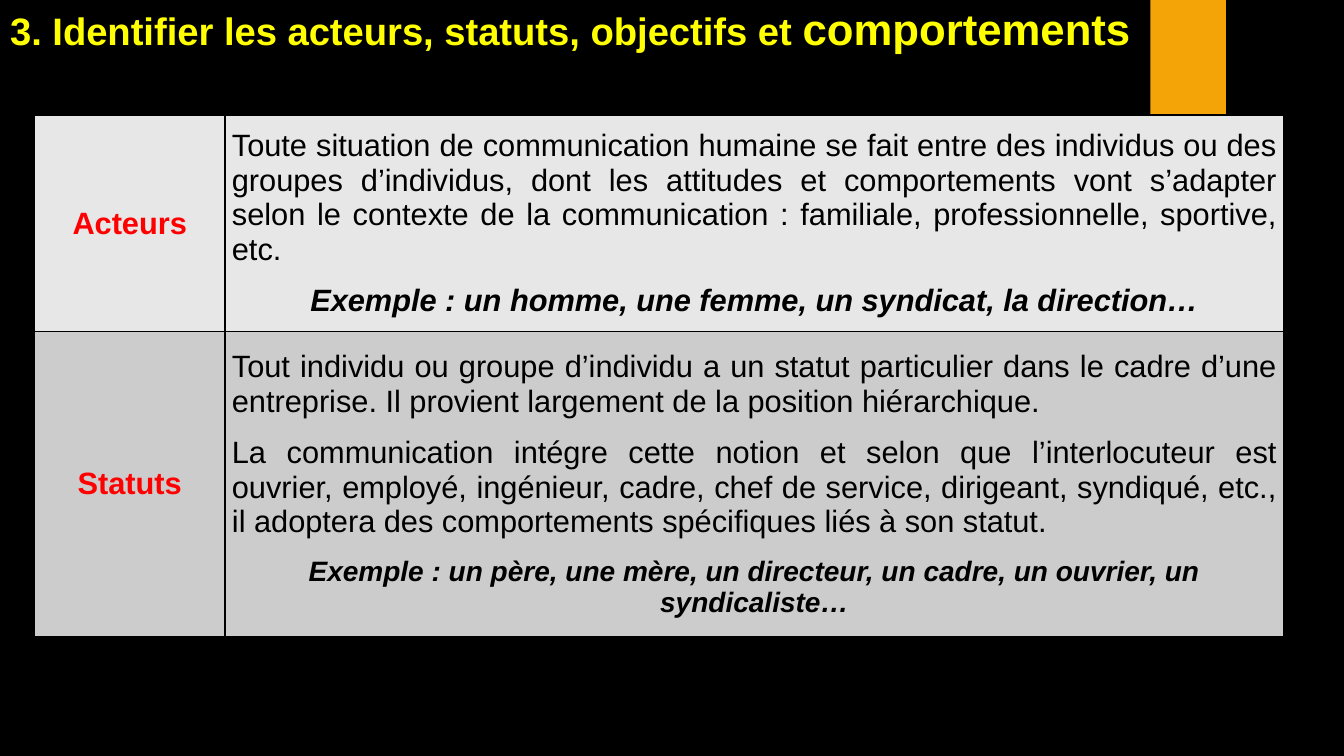
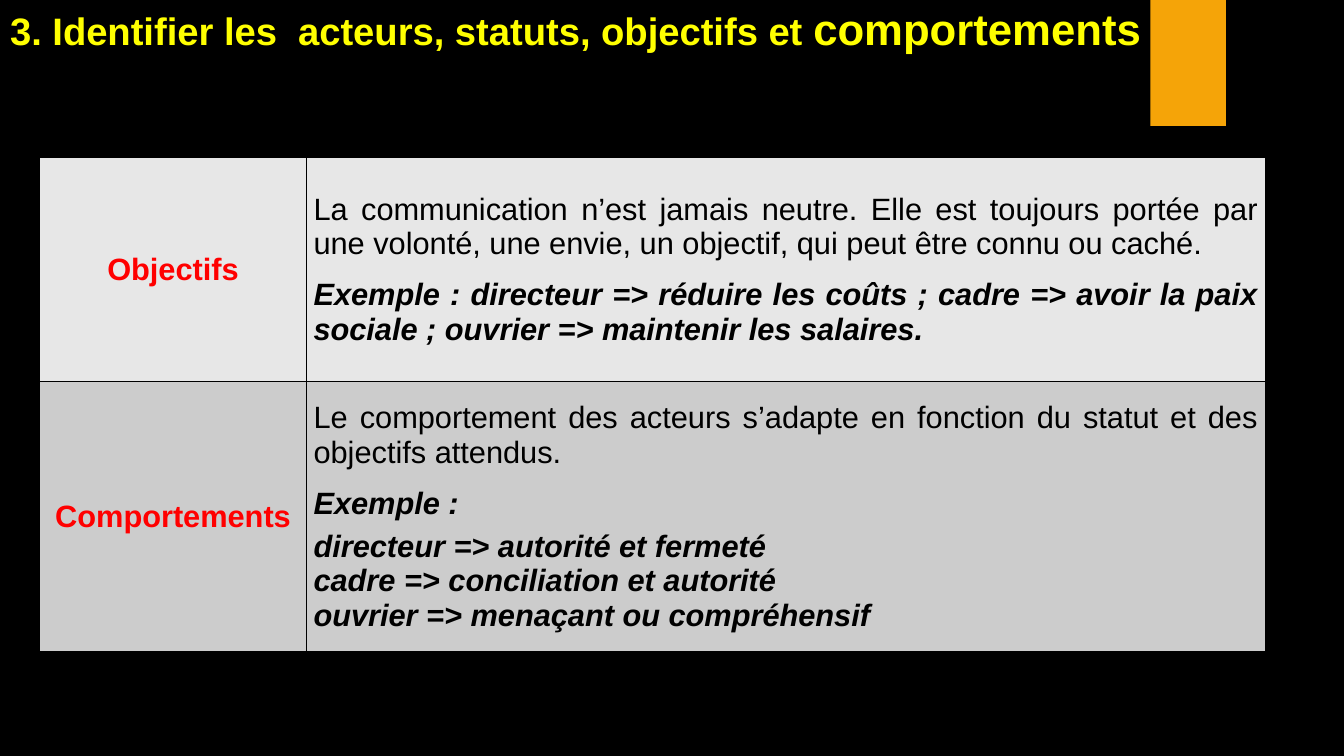
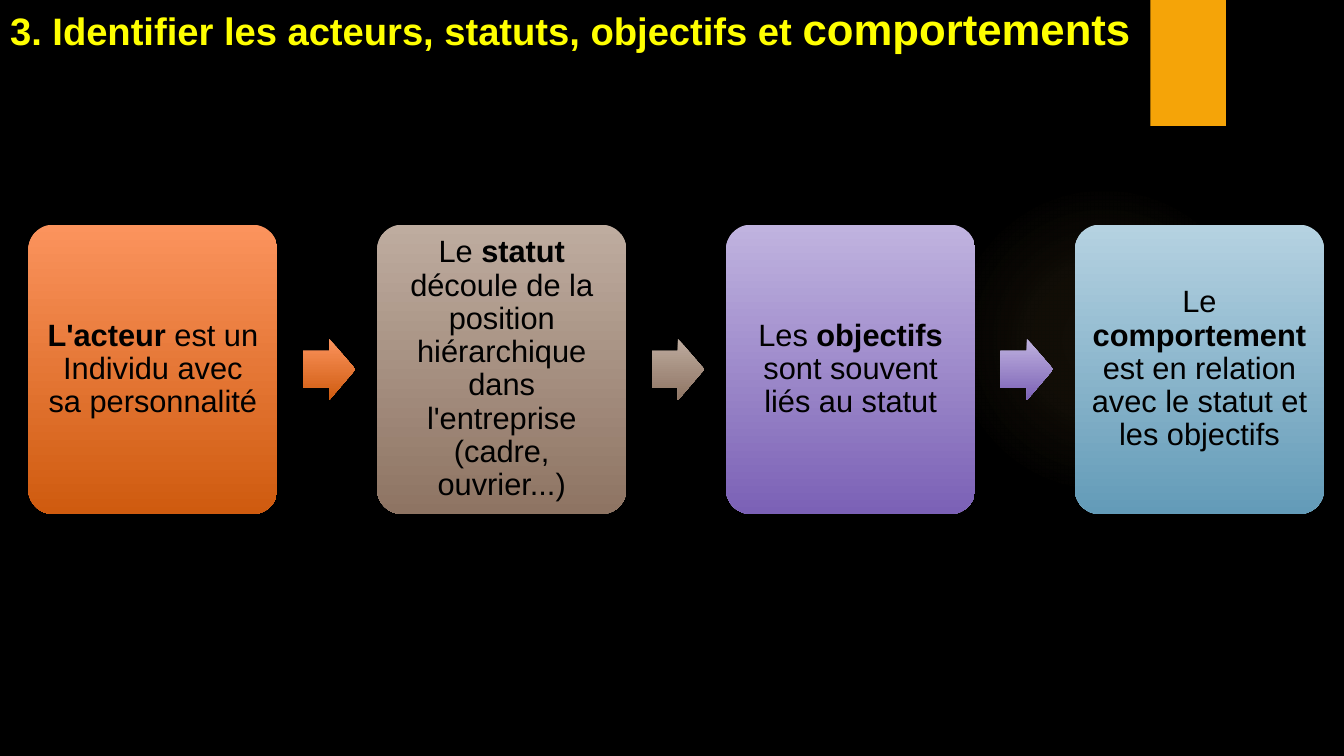
from dataclasses import dataclass

from pptx import Presentation
from pptx.dml.color import RGBColor
from pptx.enum.shapes import MSO_SHAPE as Shape
from pptx.enum.text import MSO_ANCHOR as Anchor, MSO_AUTO_SIZE as AutoSize, PP_ALIGN as Align
from pptx.oxml import parse_xml
from pptx.oxml.ns import nsdecls, qn
from pptx.util import Pt

FONT = "Arial"
BLACK, YELLOW, RED, ORANGE, GLOW = "000000", "FFFF00", "FF0000", "F5A408", "FAC96A"
ROW_FILLS = ("E7E7E7", "CCCCCC")
TITLE_BOX = (0, 0, 946, 42.5)
BAND_BOX = (821.7, 0, 54, 90)
GLOW_BOX = (677.5, 131.8, 221.8, 221.8)


@dataclass
class Run:
    text: str
    size: float = 22
    color: str = BLACK
    bold: bool = False
    italic: bool = False


@dataclass
class Para:
    runs: list[Run]
    align: Align = Align.JUSTIFY
    before: float = 6
    after: float = 6
    spacing: float = 1.0


@dataclass
class Row:
    label: str
    height: float
    paras: list[Para]


@dataclass
class TableSpec:
    left: float
    top: float
    widths: tuple[float, float]
    rows: list[Row]


@dataclass
class Step:
    runs: list[Run]
    light: str
    dark: str


def rgb(color: str) -> RGBColor:
    return RGBColor.from_string(color)


def box(values: tuple) -> list:
    return [Pt(v) for v in values]


def body(text: str) -> Para:
    return Para([Run(text)])


def example(text: str, align: Align = Align.CENTER, size: float = 22, gap: float = 6) -> Para:
    return Para([Run(text, size, bold=True, italic=True)], align, gap, gap)


def write(tf, paras: list[Para]) -> None:
    for i, para in enumerate(paras):
        p = tf.paragraphs[0] if i == 0 else tf.add_paragraph()
        layout = {"alignment": para.align, "line_spacing": para.spacing,
                  "space_before": Pt(para.before if i else 0), "space_after": Pt(para.after)}
        for name, value in layout.items():
            setattr(p, name, value)
        for run in para.runs:
            r = p.add_run()
            r.text = run.text
            style = {"name": FONT, "size": Pt(run.size), "bold": run.bold, "italic": run.italic}
            for name, value in style.items():
                setattr(r.font, name, value)
            r.font.color.rgb = rgb(run.color)


def add_plain(slide, kind: Shape, at: tuple):
    sp = slide.shapes.add_shape(kind, *box(at))
    sp.shadow.inherit = False
    sp.line.fill.background()
    return sp


def decorate_layout(layout, slide) -> None:
    """Draw the glow and the band, then move them onto the shared layout."""
    layout.background.fill.solid()
    layout.background.fill.fore_color.rgb = rgb(BLACK)

    glow = add_plain(slide, Shape.OVAL, GLOW_BOX)
    glow.fill.gradient()
    stops = "".join(
        f'<a:gs pos="{pos * 1000}"><a:srgbClr val="{GLOW}"><a:alpha val="{alpha * 1000}"/></a:srgbClr></a:gs>'
        for pos, alpha in ((0, 7), (36, 6), (69, 0), (100, 0)))
    radial = parse_xml(
        f'<a:gradFill {nsdecls("a")} rotWithShape="1"><a:gsLst>{stops}</a:gsLst><a:path path="circle">'
        '<a:fillToRect l="50000" t="50000" r="50000" b="50000"/></a:path></a:gradFill>')
    spPr = glow.element.spPr
    spPr.replace(spPr.find(qn("a:gradFill")), radial)

    band = add_plain(slide, Shape.RECTANGLE, BAND_BOX)
    band.fill.solid()
    band.fill.fore_color.rgb = rgb(ORANGE)

    for i, sp in enumerate((glow, band)):
        sp.element.nvSpPr.cNvPr.set("id", str(100 + i))
        layout.shapes.element.insert(2 + i, sp.element)


def set_title(slide, gap: str = " ") -> None:
    title = slide.shapes.title
    title.left, title.top, title.width, title.height = box(TITLE_BOX)
    tf = title.text_frame
    frame = {"vertical_anchor": Anchor.BOTTOM, "auto_size": AutoSize.NONE, "word_wrap": True}
    for name, value in frame.items():
        setattr(tf, name, value)
    write(tf, [Para([
        Run(f"3. Identifier les{gap}acteurs, statuts, objectifs et ", 27.3, YELLOW, True),
        Run("comportements", 31.2, YELLOW, True)], Align.LEFT, 0, 0)])


def fill_cell(cell, paras: list[Para], color: str) -> None:
    tcPr = cell._tc.get_or_add_tcPr()
    for side in "LRTB":
        tcPr.append(parse_xml(
            f'<a:ln{side} {nsdecls("a")} w="{Pt(1)}"><a:solidFill><a:srgbClr val="{BLACK}"/>'
            f'</a:solidFill></a:ln{side}>'))
    cell.fill.solid()
    cell.fill.fore_color.rgb = rgb(color)
    frame = {"vertical_anchor": Anchor.MIDDLE, "margin_left": Pt(5), "margin_right": Pt(5),
             "margin_top": 0, "margin_bottom": 0}
    for name, value in frame.items():
        setattr(cell, name, value)
    write(cell.text_frame, paras)


def draw_table(slide, spec: TableSpec) -> None:
    size = (sum(spec.widths), sum(row.height for row in spec.rows))
    table = slide.shapes.add_table(
        len(spec.rows), len(spec.widths), *box((spec.left, spec.top, *size))).table
    table.first_row = table.horz_banding = False
    for col, width in zip(table.columns, spec.widths):
        col.width = Pt(width)
    for i, (row, color) in enumerate(zip(spec.rows, ROW_FILLS)):
        table.rows[i].height = Pt(row.height)
        label = Para([Run(row.label, color=RED, bold=True)], Align.CENTER, 0, 0)
        fill_cell(table.cell(i, 0), [label], color)
        fill_cell(table.cell(i, 1), row.paras, color)


def add_gradient_shape(slide, kind: Shape, at: tuple, step: Step, adjustments: tuple):
    sp = add_plain(slide, kind, at)
    sp.fill.gradient()
    sp.fill.gradient_angle = 270
    for stop, color in zip(sp.fill.gradient_stops, (step.light, step.dark)):
        stop.color.rgb = rgb(color)
    for i, value in enumerate(adjustments):
        sp.adjustments[i] = value
    return sp


def draw_process(slide, steps: list[Step]) -> None:
    left, top, width, height, pitch = 20.2, 160.5, 178, 206.7, 249.2
    arrow_w, arrow_h, arrow_gap = 37.7, 44, 18
    for i, step in enumerate(steps):
        x = left + i * pitch
        card = add_gradient_shape(slide, Shape.ROUNDED_RECTANGLE, (x, top, width, height), step, (0.1,))
        tf = card.text_frame
        frame = {"word_wrap": True, "vertical_anchor": Anchor.MIDDLE}
        frame |= {f"margin_{side}": Pt(6.6) for side in ("left", "right", "top", "bottom")}
        for name, value in frame.items():
            setattr(tf, name, value)
        write(tf, [Para(step.runs, Align.CENTER, 0, 0, 0.9)])
        if i < len(steps) - 1:
            at = (x + width + arrow_gap, top + (height - arrow_h) / 2, arrow_w, arrow_h)
            add_gradient_shape(slide, Shape.RIGHT_ARROW, at, step, (0.6, 0.5))


ACTORS = TableSpec(24.7, 82.2, (136, 756.5), [
    Row("Acteurs", 154.7, [
        body("Toute situation de communication humaine se fait entre des individus ou des groupes "
             "d’individus, dont les attitudes et comportements vont s’adapter selon le contexte de la "
             "communication : familiale, professionnelle, sportive, etc."),
        example("Exemple : un homme, une femme, un syndicat, la direction…")]),
    Row("Statuts", 218, [
        body("Tout individu ou groupe d’individu a un statut particulier dans le cadre d’une "
             "entreprise. Il provient largement de la position hiérarchique."),
        body("La communication intégre cette notion et selon que l’interlocuteur est ouvrier, employé, "
             "ingénieur, cadre, chef de service, dirigeant, syndiqué, etc., il adoptera des "
             "comportements spécifiques liés à son statut."),
        example("Exemple : un père, une mère, un directeur, un cadre, un ouvrier, un syndicaliste…",
                size=20)]),
])

GOALS = TableSpec(28.3, 112.4, (190.7, 684.7), [
    Row("Objectifs", 160.3, [
        body("La communication n’est jamais neutre. Elle est toujours portée par une volonté, une "
             "envie, un objectif, qui peut être connu ou caché."),
        example("Exemple : directeur => réduire les coûts ; cadre => avoir la paix sociale ; "
                "ouvrier => maintenir les salaires.", Align.JUSTIFY)]),
    Row("Comportements", 192.7, [
        body("Le comportement des acteurs s’adapte en fonction du statut et des objectifs attendus."),
        example("Exemple :", Align.LEFT),
        *(example(text, Align.LEFT, gap=0) for text in (
            "directeur => autorité et fermeté",
            "cadre => conciliation et autorité",
            "ouvrier => menaçant ou compréhensif"))]),
])

STEPS = [
    Step([Run("L'acteur", bold=True), Run(" est un Individu avec sa personnalité")], "FB935D", "CF5B0F"),
    Step([Run("Le "), Run("statut", bold=True),
          Run(" découle de la position hiérarchique dans l'entreprise (cadre, ouvrier...)")],
         "BEAC9F", "8E7463"),
    Step([Run("Les "), Run("objectifs", bold=True), Run(" sont souvent liés au statut")],
         "C0B3DF", "7B61B6"),
    Step([Run("Le "), Run("comportement", bold=True),
          Run(" est en relation avec le statut et les objectifs")], "B5D2E1", "639BB8"),
]


def main() -> None:
    prs = Presentation()
    prs.slide_width, prs.slide_height = Pt(960), Pt(540)
    layout = prs.slide_layouts[5]
    actors, goals, process = (prs.slides.add_slide(layout) for _ in range(3))
    decorate_layout(layout, actors)

    # Actors and statuses
    set_title(actors)
    draw_table(actors, ACTORS)

    # Goals and behaviours
    set_title(goals, gap="  ")
    draw_table(goals, GOALS)

    # How the four notions follow one another
    set_title(process)
    draw_process(process, STEPS)

    prs.save("out.pptx")


if __name__ == "__main__":
    main()
